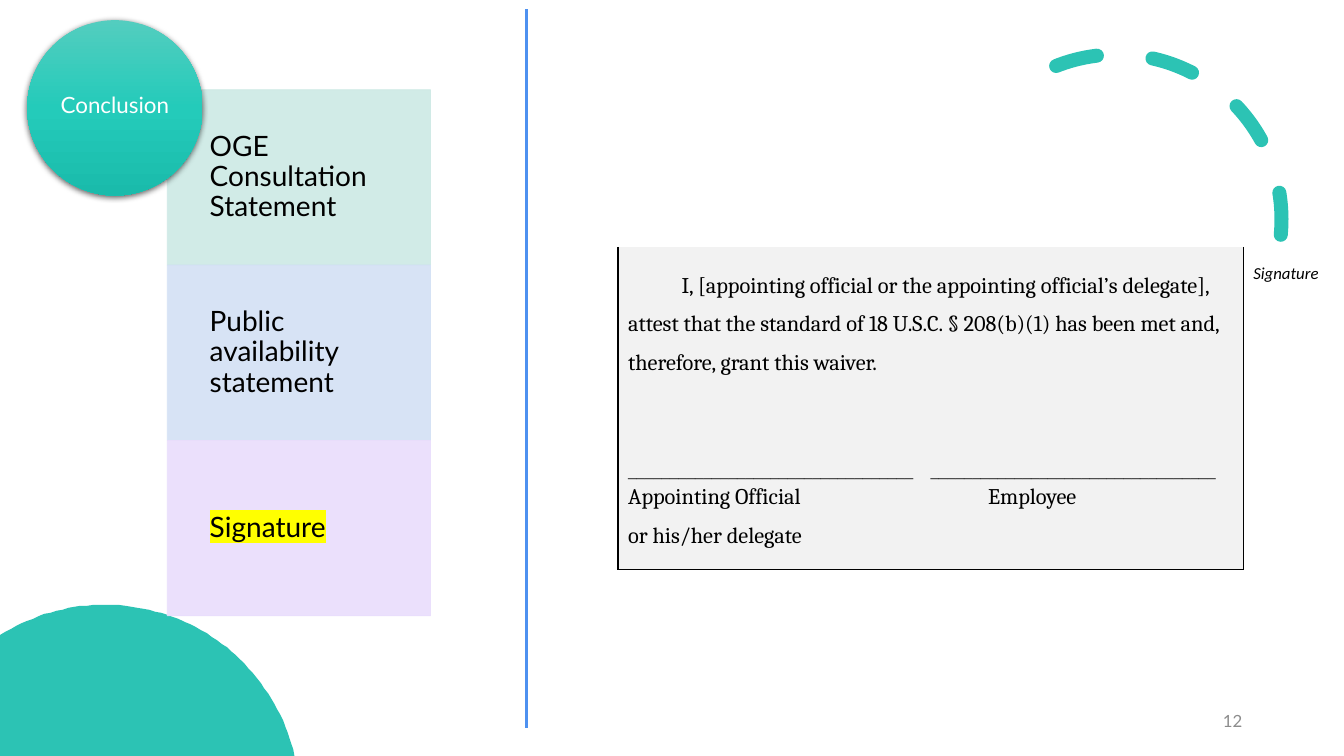
from math import acos, asin, cos, sin

from lxml.etree import SubElement
from pptx import Presentation
from pptx.dml.color import RGBColor
from pptx.enum.dml import MSO_LINE
from pptx.enum.shapes import MSO_CONNECTOR, MSO_SHAPE
from pptx.enum.text import MSO_ANCHOR, PP_ALIGN
from pptx.oxml.ns import qn
from pptx.util import Emu, Pt

TEAL = "2CC3B4"
BLACK = "000000"
STEPS = [
    ("OGE Consultation Statement", "CDE9E5", None),
    ("Public availability statement", "D3E1F5", None),
    ("Signature", "E9DDFC", "FFFF00"),
]
ATTEST = ("I, [appointing official or the appointing official’s delegate], attest that "
          "the standard of 18 U.S.C. § 208(b)(1) has been met and, therefore, grant this waiver.")
SIGN_LINE = "_" * 34


def px(length):
    """100 px to the inch."""
    return Emu(length * 9144)


def place(box):
    return [px(length) for length in box]


def color(hex_string):
    return RGBColor.from_string(hex_string)


def add_color(parent, hex_string, alpha=None):
    node = SubElement(parent, qn("a:srgbClr"), val=hex_string)
    if alpha:
        SubElement(node, qn("a:alpha"), val=str(alpha * 1000))


def set_alpha(fill_owner, alpha):
    for node in fill_owner.iter(qn("a:srgbClr")):
        SubElement(node, qn("a:alpha"), val=str(alpha * 1000))


def write(para, text, font="Lato", size=16, ink=BLACK, italic=None, align=PP_ALIGN.LEFT,
          spacing=None, before=0, after=0, indent=0, tab=None, highlight=None):
    para.alignment = align
    para.line_spacing = spacing
    para.space_before, para.space_after = Pt(before), Pt(after)
    props = para._p.get_or_add_pPr()
    if indent:
        props.set("marL", "0")
        props.set("indent", str(px(indent)))
    if tab:
        stops = SubElement(props, qn("a:tabLst"))
        SubElement(stops, qn("a:tab"), pos=str(px(tab)), algn="l")
    span = para.add_run()
    span.text = text
    span.font.size, span.font.italic = Pt(size), italic
    span.font.color.rgb = color(ink)
    if highlight:
        add_color(SubElement(span._r.get_or_add_rPr(), qn("a:highlight")), highlight)
    span.font.name = font


def set_frame(frame, margins=(0, 0, 0, 0)):
    frame.word_wrap = True
    frame.vertical_anchor = MSO_ANCHOR.MIDDLE
    (frame.margin_left, frame.margin_top,
     frame.margin_right, frame.margin_bottom) = place(margins)


def add_shape(page, kind, box):
    shape = page.shapes.add_shape(kind, *place(box))
    shape.shadow.inherit = False
    return shape


def add_dashed_arc(page, box):
    arc = add_shape(page, MSO_SHAPE.ARC, box)
    arc.adjustments[0], arc.adjustments[1] = 144.42, 0
    arc.rotation = 66.1
    arc._element.spPr.find(qn("a:xfrm")).set("flipH", "1")
    arc.fill.background()
    arc.line.color.rgb = color(TEAL)
    arc.line.width = Pt(10)
    arc.line.dash_style = MSO_LINE.DASH
    arc.line._get_or_add_ln().set("cap", "rnd")


def add_corner_disc(page, box):
    """Disc cut off by the left and bottom edges of the box."""
    left, top, width, height = box
    center_x, radius = 104, 193
    start = asin(-center_x / radius)
    end = acos((radius - height) / radius)
    count = 60
    turns = [start + (end - start) * step / count for step in range(count + 1)]
    rim = [(left + center_x + radius * sin(turn), top + radius * (1 - cos(turn)))
           for turn in turns]
    builder = page.shapes.build_freeform(left, top + height, scale=px(1))
    builder.add_line_segments(rim)
    disc = builder.convert_to_shape()
    disc.shadow.inherit = False
    disc.fill.solid()
    disc.fill.fore_color.rgb = color(TEAL)
    disc.line.fill.background()


def add_steps(page, box):
    left, top, width, height = box
    step_height = height // len(STEPS)
    for index, (text, tint, highlight) in enumerate(STEPS):
        step = add_shape(page, MSO_SHAPE.RECTANGLE,
                         (left, top + index * step_height, width, step_height))
        step.fill.solid()
        step.fill.fore_color.rgb = color(tint)
        step.line.color.rgb = color(tint)
        step.line.width = Pt(0.5)
        set_alpha(step._element.spPr, 90)
        set_frame(step.text_frame, (42, 16, 16, 16))
        write(step.text_frame.paragraphs[0], text, size=20, spacing=0.9,
              highlight=highlight)


def add_title_badge(page, box):
    badge = add_shape(page, MSO_SHAPE.OVAL, box)
    badge.line.fill.background()
    # Gradient from top to bottom
    badge.fill.gradient()
    badge.fill.gradient_angle = 270
    props = badge._element.spPr
    stops = next(props.iter(qn("a:gsLst")))
    for stop in list(stops):
        stops.remove(stop)
    for position, tint in ((0, "53CDBF"), (50, "24CBBA"), (100, "1ABBAB")):
        add_color(SubElement(stops, qn("a:gs"), pos=str(position * 1000)), tint)
    # Soft shadow below
    shadow = SubElement(props.find(qn("a:effectLst")), qn("a:outerShdw"),
                        blurRad=str(Pt(4.5)), dist=str(Pt(1.5)), dir="5400000",
                        algn="ctr", rotWithShape="0")
    add_color(shadow, BLACK, 63)
    set_frame(badge.text_frame, (0, 0, 0, 3))
    write(badge.text_frame.paragraphs[0], "Conclusion", ink="FFFFFF", spacing=0.9,
          align=PP_ALIGN.CENTER)


def add_divider(page, x, top, bottom):
    divider = page.shapes.add_connector(MSO_CONNECTOR.STRAIGHT, px(x), px(top), px(x), px(bottom))
    divider.line.color.rgb = color("4E91F0")
    divider.line.width = Pt(2.25)
    SubElement(divider._element.spPr, qn("a:effectLst"))


def set_cell(cell, margins, sides, fill=None):
    """Black borders on the named sides (L, R, T, B), none elsewhere."""
    (cell.margin_left, cell.margin_top,
     cell.margin_right, cell.margin_bottom) = place(margins)
    props = cell._tc.get_or_add_tcPr()
    for side in "LRTB":
        border = SubElement(props, qn(f"a:ln{side}"), w=str(Pt(1)))
        if side in sides:
            add_color(SubElement(border, qn("a:solidFill")), BLACK)
        else:
            SubElement(border, qn("a:noFill"))
    if fill:
        cell.fill.solid()
        cell.fill.fore_color.rgb = color(fill)
    else:
        cell.fill.background()


def add_attestation(page, box, form_width):
    left, top, width, height = box
    table = page.shapes.add_table(1, 2, *place(box)).table
    table.first_row = table.horz_banding = False
    table.columns[0].width = px(form_width)
    table.columns[1].width = px(width - form_width)
    form, label = table.cell(0, 0), table.cell(0, 1)
    set_cell(form, (10, 13, 10, 10), "LRB", fill="F2F2F2")
    set_cell(label, (10, 13, 0, 10), "L")

    lines = [
        (ATTEST, dict(spacing=1.5, indent=53)),
        (f"{SIGN_LINE}\t{SIGN_LINE}",
         dict(font="Times New Roman", size=12, spacing=1.5, before=55, tab=300)),
        ("Appointing Official\tEmployee", dict(spacing=1.15, tab=357)),
        ("or his/her delegate", dict(spacing=1.5)),
    ]
    frame = form.text_frame
    for index, (text, style) in enumerate(lines):
        para = frame.add_paragraph() if index else frame.paragraphs[0]
        write(para, text, **{"font": "Cambria", **style})
    write(label.text_frame.paragraphs[0], "Signature", font="Calibri", size=12,
          italic=True, spacing=1.15)


def add_page_number(page, box, number):
    holder = page.shapes.add_textbox(*place(box))
    set_frame(holder.text_frame, (10, 5, 10, 5))
    write(holder.text_frame.paragraphs[0], number, size=12, ink="8C8C8C",
          align=PP_ALIGN.RIGHT, after=6)


def main():
    deck = Presentation()
    deck.slide_width, deck.slide_height = px(1333), px(750)
    page = deck.slides.add_slide(deck.slide_layouts[6])
    add_dashed_arc(page, (944, 54, 327, 327))
    add_corner_disc(page, (0, 600, 292, 150))
    add_page_number(page, (942, 695, 300, 40), "12")
    add_steps(page, (166, 89, 261, 522))
    add_title_badge(page, (27, 20, 174, 174))
    add_divider(page, 522, 9, 722)
    add_attestation(page, (613, 245, 792, 310), form_width=620)
    deck.save("out.pptx")


if __name__ == "__main__":
    main()
